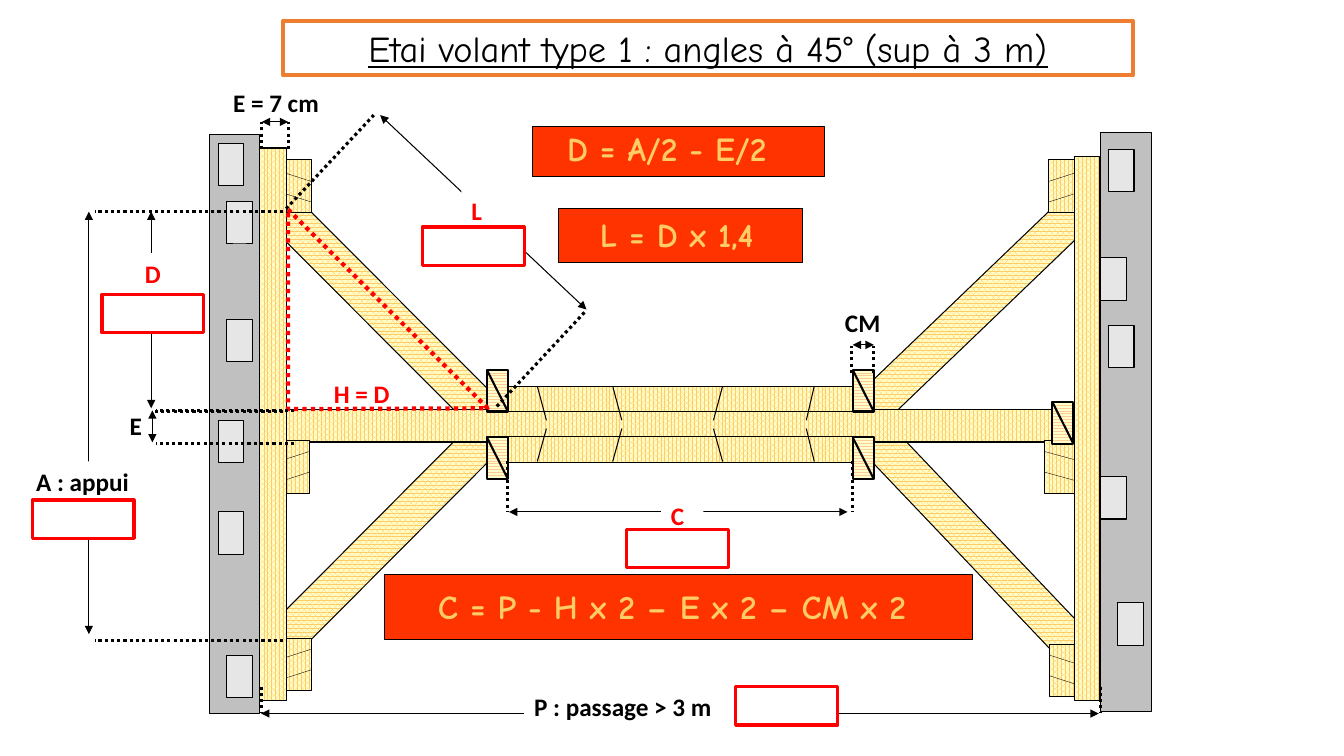
from lxml.etree import SubElement
from pptx import Presentation
from pptx.dml.color import RGBColor
from pptx.enum.dml import MSO_LINE, MSO_PATTERN_TYPE as Pattern
from pptx.enum.shapes import MSO_CONNECTOR, MSO_SHAPE
from pptx.enum.text import MSO_ANCHOR, PP_ALIGN
from pptx.oxml.ns import qn
from pptx.util import Cm, Pt

BLACK = RGBColor(0x00, 0x00, 0x00)
WHITE = RGBColor(0xFF, 0xFF, 0xFF)
RED = RGBColor(0xFF, 0x00, 0x00)
ORANGE = RGBColor(0xED, 0x7D, 0x31)
VERMILION = RGBColor(0xFF, 0x33, 0x00)
GOLD = RGBColor(0xFF, 0xCC, 0x66)
PEACH = RGBColor(0xFF, 0xCC, 0x99)
CREAM = RGBColor(0xFF, 0xFF, 0xCC)
CONCRETE = RGBColor(0xC0, 0xC0, 0xC0)
STONE = RGBColor(0xE7, 0xE6, 0xE6)

TIMBER = (Pattern.PERCENT_75, GOLD)
WEDGE = (Pattern.ZIG_ZAG, PEACH)


def apply(target, values):
    for key, value in values.items():
        setattr(target, key, value)


class Drawing:
    title_font = {"name": "Comic Neue", "size": Pt(26), "underline": True, "bold": False}
    formula_font = {"name": "Comic Neue", "size": Pt(24), "bold": True}
    label_font = {"name": "Calibri", "size": Pt(18), "bold": True}

    def __init__(self, slide):
        self.slide = slide
        self.shapes = slide.shapes

    def paint(self, shape, fill, color=BLACK, width=0.75, dash=None):
        """Fill is None, a colour, or a (pattern, foreground) pair."""
        shape.shadow.inherit = False
        if fill is None:
            shape.fill.background()
        elif isinstance(fill, RGBColor):
            shape.fill.solid()
            shape.fill.fore_color.rgb = fill
        else:
            shape.fill.patterned()
            shape.fill.pattern = fill[0]
            shape.fill.fore_color.rgb = fill[1]
            shape.fill.back_color.rgb = CREAM
        shape.line.color.rgb = color
        apply(shape.line, {"width": Pt(width), "dash_style": dash})

    def rect(self, x, y, w, h, fill, turned=False, **outline):
        """Box as seen; a turned one is laid along its other axis."""
        if turned:
            x, y, w, h = x + (w - h) / 2, y + (h - w) / 2, h, w
        box = self.shapes.add_shape(MSO_SHAPE.RECTANGLE, Cm(x), Cm(y), Cm(w), Cm(h))
        box.rotation = 90 if turned else 0
        self.paint(box, fill, **outline)

    def polygon(self, points, fill, **outline):
        start, *others = [(Cm(x), Cm(y)) for x, y in points]
        builder = self.shapes.build_freeform(*start)
        builder.add_line_segments(others, close=True)
        self.paint(builder.convert_to_shape(), fill, **outline)

    def line(self, x1, y1, x2, y2, width=0.75, dash=None, arrows=False):
        stroke = self.shapes.add_connector(
            MSO_CONNECTOR.STRAIGHT, Cm(x1), Cm(y1), Cm(x2), Cm(y2))
        stroke.line.color.rgb = BLACK
        apply(stroke.line, {"width": Pt(width), "dash_style": dash})
        properties = stroke._element.spPr
        if arrows:
            for end in ("a:headEnd", "a:tailEnd"):
                SubElement(properties.find(qn("a:ln")), qn(end), type="triangle")
        SubElement(properties, qn("a:effectLst"))

    def fill_text(self, frame, words, font, color, align=PP_ALIGN.CENTER):
        apply(frame, {"word_wrap": True, "vertical_anchor": MSO_ANCHOR.MIDDLE})
        paragraph = frame.paragraphs[0]
        paragraph.alignment = align
        run = paragraph.add_run()
        run.text = words
        apply(run.font, font)
        run.font.color.rgb = color

    def title(self, words, x, y, w, h):
        heading = self.shapes.title
        apply(heading, {"left": Cm(x), "top": Cm(y), "width": Cm(w), "height": Cm(h)})
        heading.line.color.rgb = ORANGE
        heading.line.width = Pt(3)
        self.fill_text(heading.text_frame, words, self.title_font, BLACK)

    def label(self, words, x, y, w, h, font, color, align=PP_ALIGN.CENTER, fill=None):
        box = self.shapes.add_textbox(Cm(x), Cm(y), Cm(w), Cm(h))
        if fill is not None:
            box.fill.solid()
            box.fill.fore_color.rgb = fill
        self.fill_text(box.text_frame, words, font, color, align)

    def brace(self, ax, ay, bx, by, cut=0.69):
        dx = cut if bx > ax else -cut
        dy = cut if by > ay else -cut
        self.polygon([(ax, ay + dy), (ax, ay), (ax + dx, ay),
                      (bx, by - dy), (bx, by), (bx - dx, by)], TIMBER)

    def cleat(self, x, y, w=0.64, left=True, upper=False):
        self.rect(x, y, w, 1.32, TIMBER, turned=True)
        wall, free = (x - 0.2, x + w) if left else (x + w + 0.2, x)
        for grain in (0.27, 0.79):
            near, far = (grain, grain + 0.27) if upper else (grain + 0.27, grain)
            self.line(wall, y + near, free, y + far, width=0.25)

    def wedge(self, x, y, w=0.53, h=1.05):
        self.rect(x, y, w, h, WEDGE, turned=True, width=1.5)
        self.line(x + w, y + h, x, y, width=1.5)

    def wall(self, x, y, stones):
        self.rect(x, y, 1.27, 14.61, CONCRETE)
        for stone_x, stone_y in stones:
            self.rect(stone_x, stone_y, 0.64, 1.07, STONE)

    def dimension(self, arrow, *guides):
        self.line(*arrow, arrows=True)
        for guide in guides:
            self.line(*guide, width=2.25, dash=MSO_LINE.ROUND_DOT)


def main():
    deck = Presentation()
    apply(deck, {"slide_width": Cm(33.87), "slide_height": Cm(19.05)})
    shore = Drawing(deck.slides.add_slide(deck.slide_layouts[5]))
    shore.title("Etai volant type 1 : angles à 45° (sup à 3 m)", 7.14, 0.53, 21.41, 1.37)

    # Braces and central beam
    for ends in [(21.95, 10.92, 27.13, 16.33), (27.33, 5.13, 21.74, 10.52),
                 (7.14, 16.13, 12.73, 10.52), (7.14, 5.33, 12.52, 10.72)]:
        shore.brace(*ends)
    shore.rect(7.2, 10.33, 20.14, 0.81, TIMBER, turned=True)
    shore.cleat(26.33, 11.11, w=0.79, left=False)

    # Spacers above and below the beam, with their grain marks
    for top, outer, inner in [(9.74, 9.73, 10.59), (11.01, 11.63, 10.8)]:
        shore.rect(12.69, top, 8.89, 0.64, TIMBER, turned=True)
        for edge_x, beam_x in [(13.54, 13.77), (15.44, 15.67), (18.21, 17.98), (20.52, 20.32)]:
            shore.line(edge_x, outer, beam_x, inner)
    for x in (12.27, 21.49):
        for y in (9.32, 11.02):
            shore.wedge(x, y)
    shore.cleat(7.15, 11.11)

    # Walls, cleats and posts
    shore.wall(27.74, 3.33, [(28.17, 15.19), (27.74, 12.01), (27.94, 8.2),
                             (27.74, 6.5), (27.94, 3.76)])
    shore.wall(5.28, 3.38, [(5.72, 16.51), (5.51, 12.9), (5.51, 10.59),
                            (5.72, 8.05), (5.72, 5.08), (5.51, 3.61)])
    shore.wedge(26.52, 10.13)
    shore.cleat(26.43, 4.03, left=False, upper=True)
    shore.cleat(26.45, 16.24, left=False)
    shore.cleat(7.2, 4.03, upper=True)
    shore.cleat(7.2, 16.09)
    shore.rect(27.08, 3.94, 0.64, 13.72, TIMBER)
    shore.rect(6.55, 3.73, 0.66, 13.92, TIMBER)

    # Dimensions D, A, E, L, C, CM, E (top) and P
    shore.polygon([(7.26, 5.28), (12.29, 10.29), (7.26, 10.31)], None,
                  color=RED, width=3, dash=MSO_LINE.ROUND_DOT)
    for x, top, bottom, guide_x, guide_end, guides in [
            (3.81, 5.33, 10.29, 3.91, 7.14, (5.33, 10.36)),
            (2.24, 5.33, 15.98, 2.39, 7.14, (5.33, 16.13)),
            (3.84, 10.34, 11.15, 3.94, 7.42, (10.34, 11.18))]:
        shore.dimension((x, bottom, x, top),
                        *[(guide_end, y, guide_x, y) for y in guides])
    shore.dimension((9.58, 2.9, 14.78, 7.8),
                    (12.52, 10.24, 14.73, 7.87), (7.21, 5.26, 9.42, 2.9))
    for y, left, right, guide_y, guide_end, guides in [
            (12.9, 12.83, 21.36, 11.61, 12.88, (12.8, 21.49)),
            (8.69, 21.49, 22.02, 9.4, 8.71, (21.46, 22.02)),
            (3.07, 6.6, 7.26, 3.76, 3.07, (6.58, 7.26)),
            (17.98, 6.58, 27.69, 17.3, 17.96, (6.58, 27.74))]:
        shore.dimension((left, y, right, y),
                        *[(x, guide_y, x, guide_end) for x in guides])

    # Formulas
    for words, plate, place in [
            ("D = A/2 - E/2", (13.41, 3.18, 7.37, 1.27), (13.44, 2.92, 6.73, 1.63)),
            ("L = D x 1,4", (14.07, 5.26, 6.15, 1.35), (14.3, 5.49, 5.51, 0.81)),
            ("C = P - H x 2 – E x 2 – CM x 2", (9.68, 14.48, 14.83, 1.63),
             (9.8, 14.63, 14.27, 1.27))]:
        shore.rect(*plate, VERMILION)
        shore.label(words, *place, shore.formula_font, GOLD)

    # Labels
    left, center = PP_ALIGN.LEFT, PP_ALIGN.CENTER
    for words, x, y, w, color, align, fill in [
            ("A : appui", 0.66, 11.63, 3.35, BLACK, left, WHITE),
            ("E", 2.77, 10.21, 1.3, BLACK, center, None),
            ("D", 3.2, 6.38, 1.3, RED, center, WHITE),
            ("L", 11.63, 4.8, 1.07, RED, left, WHITE),
            ("C", 16.66, 12.47, 1.07, RED, left, WHITE),
            ("CM", 20.85, 7.62, 1.78, BLACK, center, None),
            ("E = 7 cm", 5.33, 2.08, 3.25, BLACK, center, None),
            ("P : passage > 3 m", 13.21, 17.3, 5.79, BLACK, left, WHITE),
            ("H = D", 7.92, 9.4, 2.39, RED, center, None)]:
        shore.label(words, x, y, w, 1.02, shore.label_font, color, align, fill)

    # Blank boxes for the measured values
    for x, y in [(10.64, 5.72), (2.57, 7.42), (0.81, 12.6), (15.8, 13.34), (18.54, 17.3)]:
        shore.rect(x, y, 2.57, 0.97, WHITE, color=RED, width=2.25)

    deck.save("out.pptx")


if __name__ == "__main__":
    main()
